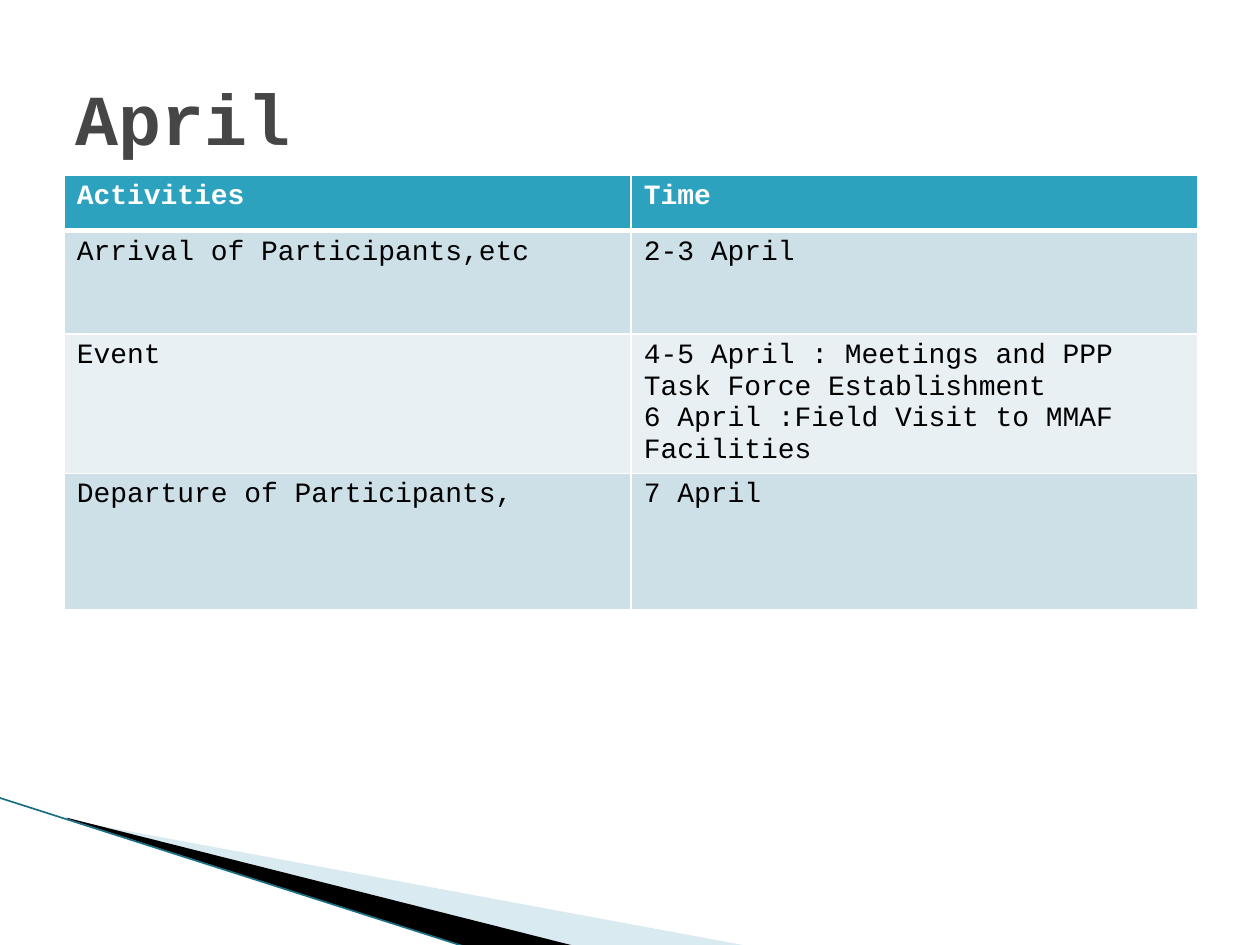
from lxml import etree
from pptx import Presentation
from pptx.dml.color import RGBColor
from pptx.enum.shapes import MSO_CONNECTOR
from pptx.enum.text import MSO_ANCHOR, PP_ALIGN
from pptx.oxml.ns import qn
from pptx.util import Inches, Pt

LINE = MSO_CONNECTOR.STRAIGHT
MIDDLE = MSO_ANCHOR.MIDDLE
LEFT = PP_ALIGN.LEFT

FONT = "Courier New"
WHITE = RGBColor(0xFF, 0xFF, 0xFF)
BLACK = RGBColor(0, 0, 0)
GRAY = RGBColor(0x46, 0x46, 0x46)
HEAD = RGBColor(0x2D, 0xA2, 0xBF)
BANDS = (RGBColor(0xE8, 0xF0, 0xF4), RGBColor(0xCD, 0xE0, 0xE8))
PALE = RGBColor(0xA0, 0xCB, 0xDC)
TEAL = RGBColor(0x1A, 0x70, 0x83)

ROWS = (
    (["Activities"], ["Time"]),
    (["Arrival of Participants,etc"], ["2-3 April"]),
    (["Event"], ["4-5 April : Meetings and PPP Task Force Establishment",
                 "6 April :Field Visit to MMAF Facilities"]),
    (["Departure of Participants,"], ["7 April"]),
)
HEIGHTS = (0.44, 0.82, 0.7, 1.08)


def add_text(frame, lines, size, color, bold):
    for i, line in enumerate(lines):
        para = frame.add_paragraph() if i else frame.paragraphs[0]
        para.alignment = LEFT
        run = para.add_run()
        run.text = line
        font = run.font
        font.name, font.size, font.bold = FONT, Pt(size), bold
        font.color.rgb = color


def add_wedge(slide, points, color, alpha=100):
    """Draw a filled outline; alpha is its opacity in percent."""
    spots = [(Inches(x), Inches(y)) for x, y in points]
    pen = slide.shapes.build_freeform(*spots[0])
    pen.add_line_segments(spots[1:], close=True)
    wedge = pen.convert_to_shape()
    wedge.shadow.inherit = False
    wedge.line.fill.background()
    wedge.fill.solid()
    wedge.fill.fore_color.rgb = color
    if alpha < 100:
        tone = wedge.fill._xPr.find(qn("a:solidFill"))[0]
        etree.SubElement(tone, qn("a:alpha"), val=str(alpha * 1000))


def add_corner(slide, left, top, width, height):
    """Place the two wedges and the edge line of the lower left corner."""
    right, base = left + width, top + height
    add_wedge(slide, [(left + 0.56, top + 0.18), (right, base - 0.01),
                      (right - 1.39, base - 0.01), (left + 0.56, top + 0.17)],
              PALE, 40)
    add_wedge(slide, [(left + 0.54, top + 0.16), (left + 4.58, base - 0.01),
                      (left + 3.73, base), (left + 0.55, top + 0.17)], BLACK)
    edge = slide.shapes.add_connector(
        LINE, Inches(left), Inches(top), Inches(left + 3.72), Inches(base))
    edge.line.color.rgb = TEAL
    edge.line.width = Pt(0.95)
    etree.SubElement(edge._element.spPr, qn("a:effectLst"))


def add_title(slide, left, top, width, height):
    title = slide.shapes.title
    title.left, title.top = Inches(left), Inches(top)
    title.width, title.height = Inches(width), Inches(height)
    title.text_frame.vertical_anchor = MIDDLE
    add_text(title.text_frame, ["April"], 41, GRAY, True)


def set_edges(cell, base):
    """Give a cell white borders, the bottom one base points wide."""
    props = cell._tc.get_or_add_tcPr()
    for i, (side, width) in enumerate(zip("LRTB", (1, 1, 1, base))):
        edge = etree.Element(qn(f"a:ln{side}"), w=str(Pt(width)))
        fill = etree.SubElement(edge, qn("a:solidFill"))
        etree.SubElement(fill, qn("a:srgbClr"), val=str(WHITE))
        props.insert(i, edge)


def add_plan(slide, left, top, width):
    """Place the table of activities and times."""
    count = len(ROWS[0])
    table = slide.shapes.add_table(
        len(ROWS), count, Inches(left), Inches(top),
        Inches(width), Inches(sum(HEIGHTS))).table
    for col in table.columns:
        col.width = Inches(width / count)
    for r, (row, height) in enumerate(zip(ROWS, HEIGHTS)):
        table.rows[r].height = Inches(height)
        top_row = r == 0
        for c, lines in enumerate(row):
            cell = table.cell(r, c)
            cell.fill.solid()
            cell.fill.fore_color.rgb = HEAD if top_row else BANDS[r % 2]
            set_edges(cell, 3 if top_row else 1)
            add_text(cell.text_frame, lines, 16,
                     WHITE if top_row else BLACK, top_row)


def main():
    deck = Presentation()
    deck.slide_width, deck.slide_height = Inches(10), Inches(7.5)
    slide = deck.slides.add_slide(deck.slide_layouts[5])
    add_corner(slide, -0.01, 6.33, 5.96, 1.19)
    add_title(slide, 0.5, 0.3, 9, 1.25)
    add_plan(slide, 0.51, 1.39, 9)
    deck.save("out.pptx")


if __name__ == "__main__":
    main()
